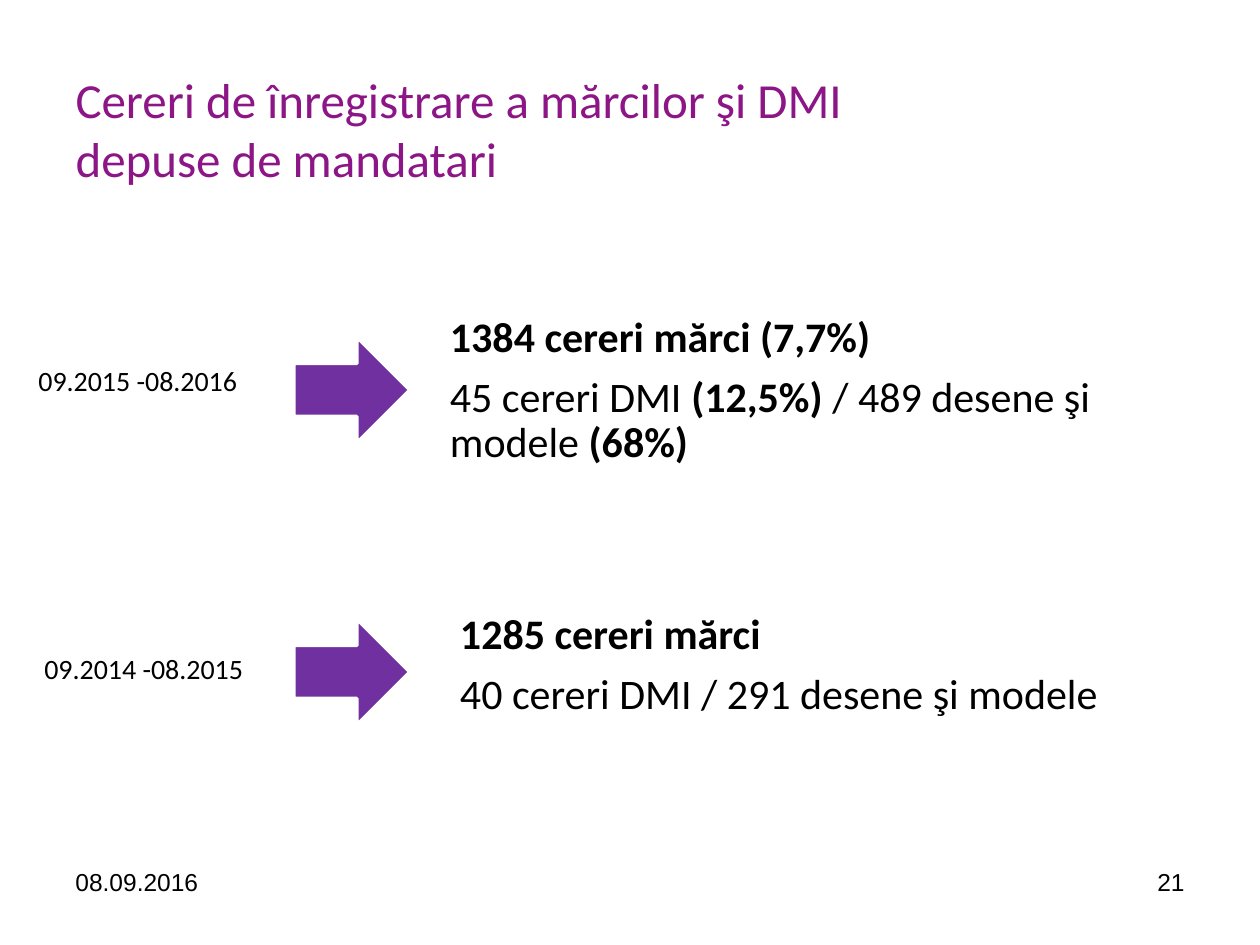
from dataclasses import dataclass

from pptx import Presentation
from pptx.dml.color import RGBColor
from pptx.enum.shapes import MSO_SHAPE
from pptx.enum.text import MSO_ANCHOR, PP_ALIGN
from pptx.util import Pt

PX = 7257  # EMU in one px, at 126 px to the inch

# A paragraph is a list of (text, bold) runs.
TITLE = [[("Cereri de înregistrare a mărcilor şi DMI\ndepuse de mandatari", False)]]
DATE = "08.09.2016"
PAGE_NUMBER = "21"
PERIODS = [
    {
        "label": "09.2015 -08.2016",
        "label_box": (26, 357, 247, 47),
        "arrow_top": 337,
        "details_box": (426, 338, 762, 131),
        "details": [
            [("1384 cereri mărci (7,7%)", True)],
            [("45 cereri DMI ", False), ("(12,5%) ", True),
             ("/ 489 desene şi modele ", False), ("(68%)", True)],
        ],
    },
    {
        "label": "09.2014 -08.2015",
        "label_box": (32, 645, 242, 47),
        "arrow_top": 619,
        "details_box": (436, 601, 742, 154),
        "details": [
            [("1285 cereri mărci", True)],
            [("40 cereri DMI / 291 desene şi modele", False)],
        ],
    },
]
TITLE_BOX = (63, 34, 1050, 189)
ARROW_LEFT, ARROW_WIDTH, ARROW_HEIGHT = 294, 116, 106
FOOTER_TOP, FOOTER_WIDTH, FOOTER_HEIGHT = 861, 294, 66
MARGIN = 63
SLIDE_WIDTH, SLIDE_HEIGHT = 1260, 945


@dataclass(frozen=True)
class Theme:
    title_color: RGBColor = RGBColor(0x8C, 0x16, 0x86)
    text_color: RGBColor = RGBColor(0, 0, 0)
    arrow_fill: RGBColor = RGBColor(0x70, 0x30, 0xA0)
    arrow_line: RGBColor = RGBColor(0xFF, 0xFF, 0xFF)
    font: str = "Calibri"
    footer_font: str = "Arial"
    title_size: int = 28
    details_size: int = 24
    label_size: int = 16
    footer_size: int = 14


THEME = Theme()


def emu(box):
    return [length * PX for length in box]


def write_text(shape, paragraphs, size, font=THEME.font, color=THEME.text_color,
               align=PP_ALIGN.LEFT, anchor=MSO_ANCHOR.TOP, insets=None,
               line_spacing=None, space_after=None):
    """Fill a shape with paragraphs of (text, bold) runs; insets are in px."""
    frame = shape.text_frame
    frame.word_wrap = True
    frame.vertical_anchor = anchor
    if insets:
        (frame.margin_left, frame.margin_top,
         frame.margin_right, frame.margin_bottom) = emu(insets)
    for index, runs in enumerate(paragraphs):
        paragraph = frame.add_paragraph() if index else frame.paragraphs[0]
        paragraph.alignment = align
        if line_spacing:
            paragraph.line_spacing = line_spacing
        if space_after:
            paragraph.space_after = Pt(space_after)
        for text, bold in runs:
            for line_index, line in enumerate(text.split("\n")):
                if line_index:
                    paragraph.add_line_break()
                run = paragraph.add_run()
                run.text = line
                run.font.name = font
                run.font.size = Pt(size)
                run.font.bold = bold
                run.font.color.rgb = color


def add_text(slide, box, paragraphs, size, **style):
    write_text(slide.shapes.add_textbox(*emu(box)), paragraphs, size, **style)


def add_arrow(slide, top):
    box = (ARROW_LEFT, top, ARROW_WIDTH, ARROW_HEIGHT)
    arrow = slide.shapes.add_shape(MSO_SHAPE.RIGHT_ARROW, *emu(box))
    arrow.shadow.inherit = False
    arrow.fill.solid()
    arrow.fill.fore_color.rgb = THEME.arrow_fill
    arrow.line.color.rgb = THEME.arrow_line
    arrow.line.width = Pt(2)


def main():
    presentation = Presentation()
    presentation.slide_width, presentation.slide_height = emu((SLIDE_WIDTH, SLIDE_HEIGHT))
    slide = presentation.slides.add_slide(presentation.slide_layouts[5])

    title = slide.shapes.title
    title.left, title.top, title.width, title.height = emu(TITLE_BOX)
    write_text(title, TITLE, THEME.title_size, color=THEME.title_color,
               anchor=MSO_ANCHOR.MIDDLE)

    for period in PERIODS:
        add_text(slide, period["label_box"], [[(period["label"], False)]], THEME.label_size)
        add_arrow(slide, period["arrow_top"])
        add_text(slide, period["details_box"], period["details"], THEME.details_size,
                 anchor=MSO_ANCHOR.MIDDLE, insets=(24, 0, 24, 24),
                 line_spacing=0.9, space_after=8)

    footers = [
        (DATE, MARGIN, PP_ALIGN.LEFT),
        (PAGE_NUMBER, SLIDE_WIDTH - MARGIN - FOOTER_WIDTH, PP_ALIGN.RIGHT),
    ]
    for text, left, align in footers:
        add_text(slide, (left, FOOTER_TOP, FOOTER_WIDTH, FOOTER_HEIGHT), [[(text, False)]],
                 THEME.footer_size, font=THEME.footer_font, align=align)

    presentation.save("out.pptx")


if __name__ == "__main__":
    main()
